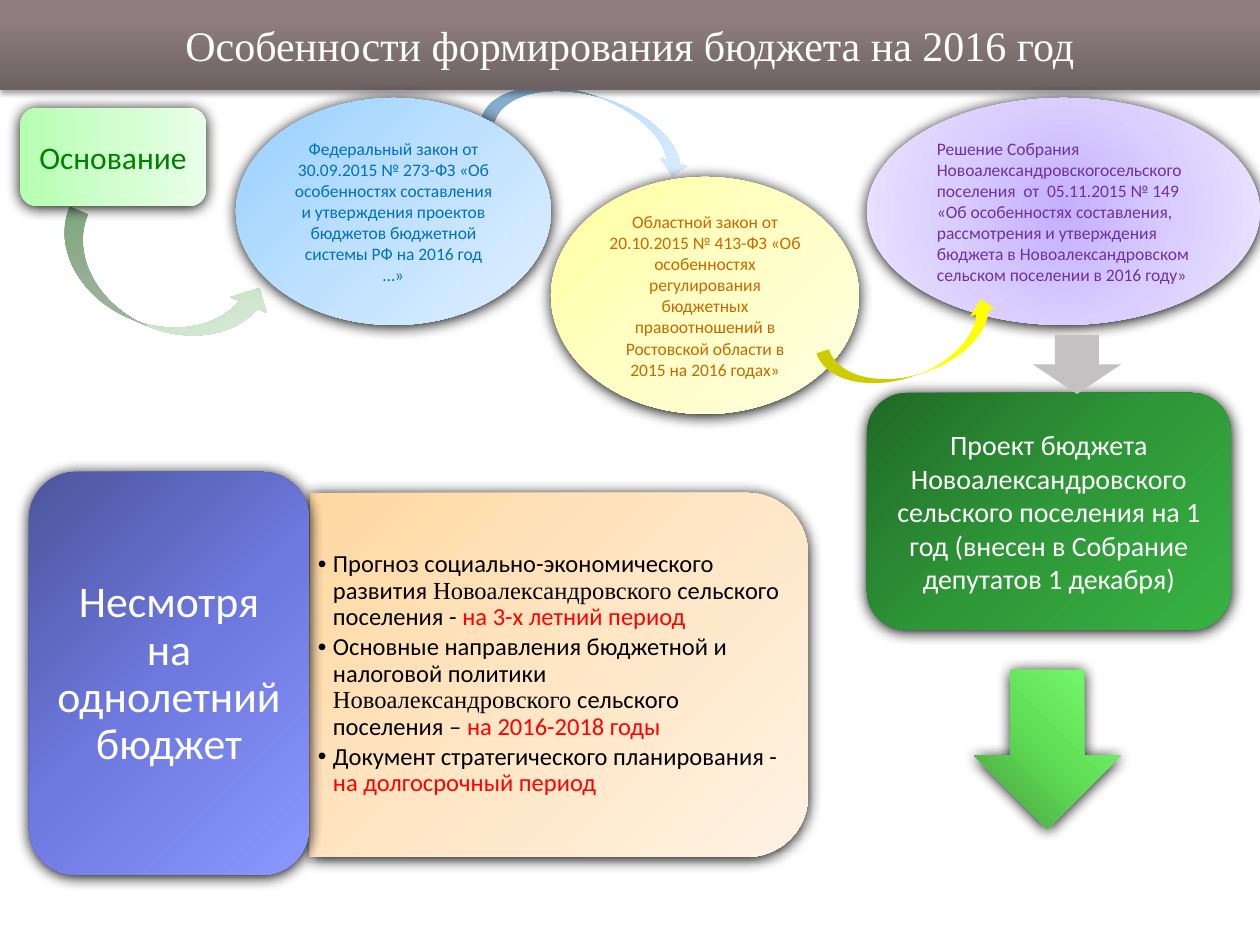
from dataclasses import dataclass
from typing import Optional

from lxml.etree import SubElement
from pptx import Presentation
from pptx.dml.color import RGBColor
from pptx.enum.shapes import MSO_SHAPE
from pptx.enum.text import MSO_ANCHOR, MSO_AUTO_SIZE, PP_ALIGN
from pptx.oxml.ns import qn
from pptx.util import Pt

PX = 914400 / 126
SANS, SERIF = "Calibri", "Times New Roman"
COLORS = {
    "white": "FFFFFF", "black": "000000", "red": "FF0000", "green": "008000",
    "blue": "0070C0", "purple": "7030A0", "orange": "CC6600",
    "yellow": "FFFF00", "grey": "C3C1C1",
}
GRADIENTS = {
    "title": ("6E6162", "8E7E7F", "8F7E80"),
    "sky": ("96D0FF", "BFE1FF", "E0EFFF"),
    "sage": ("9DCF9B", "C4E0C2", "E2EFE2"),
    "mint": ("B5FFB1", "D1FFCF", "E8FFE7"),
    "lilac": ("C4AFFF", "D9CEFF", "ECE7FF"),
    "lemon": ("FFFFA0", "FFFFC5", "FFFFE3"),
    "forest": ("216A27", "2E9738", "37B342"),
    "lime": ("449C3D", "60DE56", "79FF6F"),
    "peach": ("FFD8A0", "FFE6C5", "FFF2E3"),
    "indigo": ("4D559C", "6D79DE", "8A97FF"),
}


@dataclass
class Gradient:
    name: str
    angle: int = 45
    middle: int = 50
    focus: Optional[tuple[int, int, int, int]] = None  # left, top, right, bottom


@dataclass
class Shadow:
    opacity: int = 100
    blur: float = 8.5
    distance: float = 1


@dataclass
class Label:
    text: str
    size: int
    color: str
    font: str = SANS
    align: PP_ALIGN = PP_ALIGN.CENTER


@dataclass
class Figure:
    kind: MSO_SHAPE
    box: tuple[int, int, int, int]
    fill: Gradient | str
    label: Optional[Label] = None
    rotation: float = 0
    shadow: Optional[Shadow] = None


def px(length: float) -> int:
    return round(length * PX)


def place(shape, box: tuple[int, int, int, int]) -> None:
    shape.left, shape.top, shape.width, shape.height = map(px, box)


def set_gradient(shape, gradient: Gradient) -> None:
    shape.fill.gradient()
    fill = shape._element.spPr.find(qn("a:gradFill"))
    for child in list(fill):
        fill.remove(child)
    fill.set("rotWithShape", "0" if shape.rotation == 90 else "1")
    stops = SubElement(fill, qn("a:gsLst"))
    for position, color in zip((0, gradient.middle, 100), GRADIENTS[gradient.name]):
        stop = SubElement(stops, qn("a:gs"), pos=str(position * 1000))
        SubElement(stop, qn("a:srgbClr"), val=color)
    if gradient.focus:
        path = SubElement(fill, qn("a:path"), {"path": "circle"})
        edges = {side: str(value * 1000) for side, value in zip("ltrb", gradient.focus)}
        SubElement(path, qn("a:fillToRect"), edges)
    else:
        SubElement(fill, qn("a:lin"), ang=str(gradient.angle * 60000), scaled="0")


def set_shadow(shape, shadow: Optional[Shadow]) -> None:
    shape.shadow.inherit = False
    if shadow:
        effects = shape._element.spPr.find(qn("a:effectLst"))
        outer = SubElement(effects, qn("a:outerShdw"), blurRad=str(Pt(shadow.blur)),
                           dist=str(Pt(shadow.distance)), dir="5400000", rotWithShape="0")
        color = SubElement(outer, qn("a:srgbClr"), val=COLORS["black"])
        SubElement(color, qn("a:alpha"), val=str(shadow.opacity * 1000))


def paint(shape, fill: Gradient | str, shadow: Optional[Shadow]) -> None:
    if isinstance(fill, Gradient):
        set_gradient(shape, fill)
    else:
        shape.fill.solid()
        shape.fill.fore_color.rgb = RGBColor.from_string(COLORS[fill])
    shape.line.fill.background()
    set_shadow(shape, shadow)


def add_run(paragraph, text: str, size: int, color: str, font: str = SANS) -> None:
    run = paragraph.add_run()
    run.text = text
    run.font.size = Pt(size)
    run.font.name = font
    run.font.color.rgb = RGBColor.from_string(COLORS[color])


def prepare_frame(shape):
    frame = shape.text_frame
    frame.word_wrap = True
    frame.auto_size = MSO_AUTO_SIZE.NONE
    frame.vertical_anchor = MSO_ANCHOR.MIDDLE
    return frame


def write_label(shape, label: Label):
    paragraph = prepare_frame(shape).paragraphs[0]
    paragraph.alignment = label.align
    add_run(paragraph, label.text, label.size, label.color, label.font)
    return paragraph


def draw(slide, figure: Figure) -> None:
    shape = slide.shapes.add_shape(figure.kind, *map(px, figure.box))
    shape.rotation = figure.rotation
    paint(shape, figure.fill, figure.shadow)
    if figure.label:
        write_label(shape, figure.label)


def bring_to_front(shape) -> None:
    shape._element.getparent().append(shape._element)


def write_plans(body) -> None:
    bring_to_front(body)
    place(body, (310, 510, 480, 329))
    frame = prepare_frame(body)
    frame.margin_left = frame.margin_right = px(8)
    frame.margin_top = frame.margin_bottom = px(4)
    for index, runs in enumerate(PLANS):
        paragraph = frame.paragraphs[0] if index == 0 else frame.add_paragraph()
        paragraph.level = 1
        paragraph.line_spacing = 0.9
        paragraph.space_before, paragraph.space_after = Pt(0), Pt(2)
        properties = paragraph._p.get_or_add_pPr()
        properties.set("marL", str(px(15)))
        properties.set("indent", str(-px(15)))
        SubElement(properties, qn("a:buChar"), char="•")
        for text, color, font in runs:
            add_run(paragraph, text, 14, color, font)


SOFT = Shadow()
VILLAGE = ("Новоалександровского", "black", SERIF)
PLANS = [
    [("Прогноз социально-экономического развития ", "black", SANS), VILLAGE,
     (" сельского поселения - ", "black", SANS), ("на 3-х летний период", "red", SANS)],
    [("Основные направления бюджетной и налоговой политики ", "black", SANS), VILLAGE,
     (" сельского поселения – ", "black", SANS), ("на 2016-2018 годы", "red", SANS)],
    [("Документ стратегического планирования - ", "black", SANS),
     ("на долгосрочный период", "red", SANS)],
]
BEHIND_TITLE = [
    Figure(MSO_SHAPE.CURVED_DOWN_ARROW, (485, 96, 213, 54), Gradient("sky"), rotation=17),
    Figure(MSO_SHAPE.CURVED_UP_ARROW, (45, 248, 226, 79), Gradient("sage"), rotation=23.3),
    Figure(MSO_SHAPE.ROUNDED_RECTANGLE, (20, 108, 186, 98), Gradient("mint", 0),
           Label("Основание", 18, "green"), shadow=SOFT),
]
LAWS_AND_BUDGET = [
    Figure(MSO_SHAPE.OVAL, (236, 98, 315, 227), Gradient("sky"), Label(
        "Федеральный закон от 30.09.2015 № 273-ФЗ «Об особенностях составления и утверждения "
        "проектов бюджетов бюджетной системы РФ на 2016 год …»", 10, "blue"), shadow=SOFT),
    Figure(MSO_SHAPE.OVAL, (867, 98, 393, 227), Gradient("lilac", focus=(50, 50, 50, 50)), Label(
        "Решение Собрания Новоалександровскогосельского поселения  от  05.11.2015 № 149 "
        "«Об особенностях составления, рассмотрения и утверждения бюджета в "
        "Новоалександровском сельском поселении в 2016 году»",
        10, "purple", align=PP_ALIGN.LEFT), shadow=SOFT),
    Figure(MSO_SHAPE.OVAL, (551, 177, 308, 237), Gradient("lemon"), Label(
        "Областной закон от 20.10.2015 № 413-ФЗ «Об особенностях регулирования бюджетных "
        "правоотношений в Ростовской области в 2015 на 2016 годах»", 10, "orange"), shadow=SOFT),
    Figure(MSO_SHAPE.FLOWCHART_ALTERNATE_PROCESS, (867, 393, 364, 237), Gradient("forest"), Label(
        "Проект бюджета Новоалександровского сельского поселения на 1 год "
        "(внесен в Собрание депутатов 1 декабря)", 16, "white"), shadow=SOFT),
    Figure(MSO_SHAPE.DOWN_ARROW, (974, 670, 147, 159),
           Gradient("lime", focus=(0, 100, 100, 0)), shadow=SOFT),
    Figure(MSO_SHAPE.ROUND_2_SAME_RECTANGLE, (377, 426, 364, 498), Gradient("peach"),
           rotation=90, shadow=SOFT),
    Figure(MSO_SHAPE.ROUNDED_RECTANGLE, (29, 472, 280, 403), Gradient("indigo"), shadow=SOFT),
]
FRONT_ARROWS = [
    Figure(MSO_SHAPE.CURVED_UP_ARROW, (820, 323, 186, 52), "yellow", rotation=341.8),
    Figure(MSO_SHAPE.DOWN_ARROW, (1033, 335, 88, 59), "grey"),
]


def main() -> None:
    presentation = Presentation()
    presentation.slide_width, presentation.slide_height = px(1260), px(945)
    slide = presentation.slides.add_slide(presentation.slide_layouts[1])
    title, body = slide.placeholders
    for figure in BEHIND_TITLE:
        draw(slide, figure)

    bring_to_front(title)
    place(title, (0, 0, 1260, 90))
    paint(title, Gradient("title", 270, 80), Shadow(35, 3.1, 1.8))
    write_label(title, Label("Особенности формирования бюджета на 2016 год", 24, "white", SERIF))

    for figure in LAWS_AND_BUDGET:
        draw(slide, figure)
    write_plans(body)
    heading = slide.shapes.add_textbox(*map(px, (43, 486, 252, 377)))
    paragraph = write_label(heading, Label("Несмотря на однолетний бюджет", 25, "white"))
    paragraph.line_spacing = 0.9
    paragraph.space_after = Pt(9)
    for figure in FRONT_ARROWS:
        draw(slide, figure)
    presentation.save("out.pptx")


if __name__ == "__main__":
    main()
